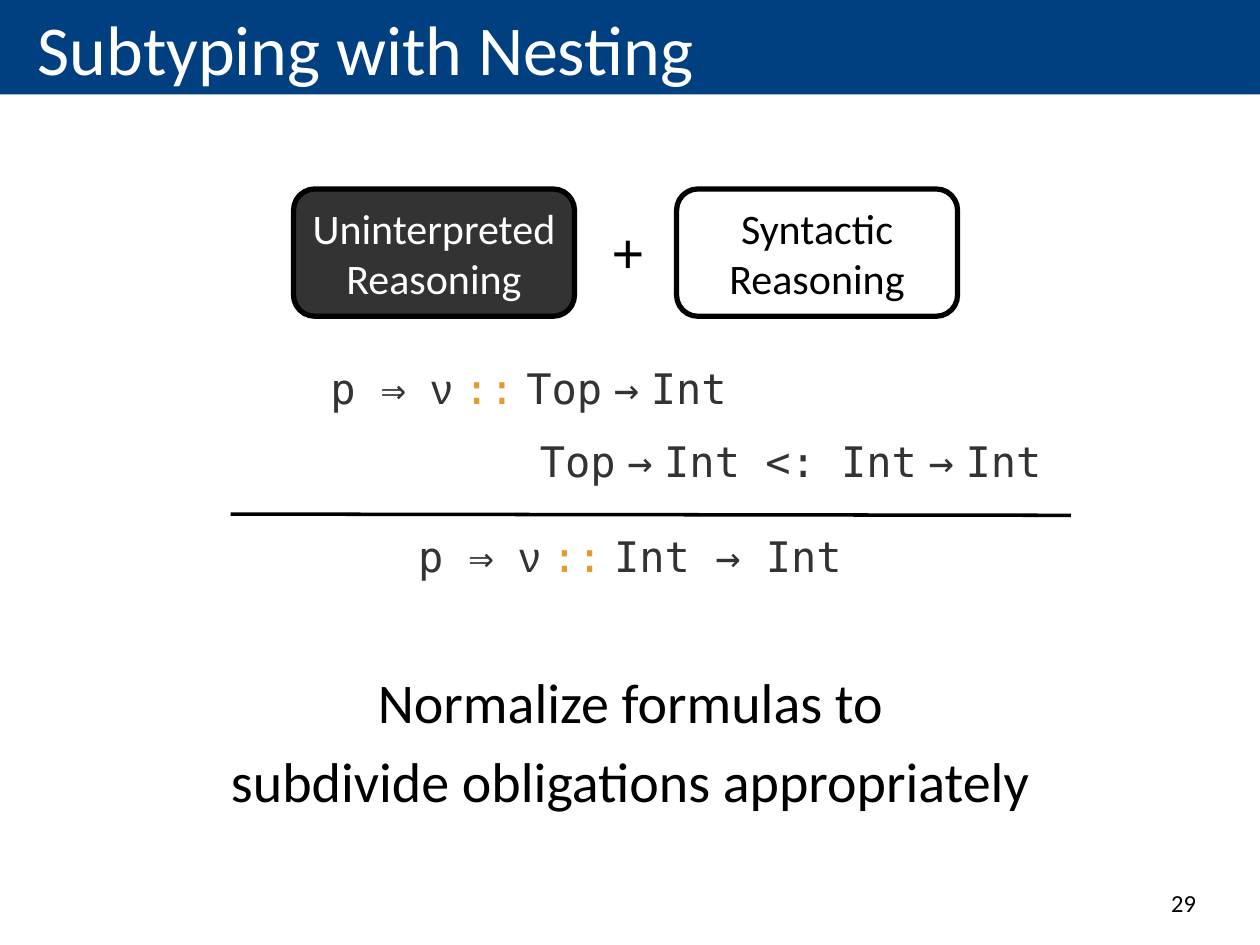
"""Builds the slide "Subtyping with Nesting"."""
import pptx
import pptx.dml.color
import pptx.enum.shapes
import pptx.enum.text
import pptx.oxml
import pptx.util

Inches = pptx.util.Inches
Pt = pptx.util.Pt
ALIGN = pptx.enum.text.PP_ALIGN
ANCHOR = pptx.enum.text.MSO_ANCHOR
SHAPES = pptx.enum.shapes.MSO_SHAPE

COLORS = {"band": "004080", "dark": "333333", "accent": "E39B30",
          "white": "FFFFFF", "black": "000000"}
MONO = "DejaVu Sans Mono"
NARROW_SPACE = (" ", "Arial", "dark")
ARROW = [NARROW_SPACE, ("→", MONO, "dark"), NARROW_SPACE]
TOP_TO_INT = [("Top", MONO, "dark"), *ARROW, ("Int", MONO, "dark")]
JUDGEMENT = [("p ⇒ ", MONO, "dark"), ("ν ", "Arial", "dark"),
             ("::", MONO, "accent"), NARROW_SPACE]


def rgb(name):
    return pptx.dml.color.RGBColor.from_string(COLORS[name])


def set_values(target, values):
    for name, value in values.items():
        setattr(target, name, value)


def add_runs(paragraph, runs, size):
    for text, font, color in runs:
        for index, line in enumerate(text.split("\n")):
            if index:
                paragraph.add_line_break()
            run = paragraph.add_run()
            run.text = line
            set_values(run.font, {"name": font, "size": Pt(size)})
            run.font.color.rgb = rgb(color)


def write(shape, paragraphs, size, align=ALIGN.CENTER, space=0, **frame_values):
    frame = shape.text_frame
    set_values(frame, {"word_wrap": True, "vertical_anchor": ANCHOR.MIDDLE, **frame_values})
    for index, runs in enumerate(paragraphs):
        paragraph = frame.add_paragraph() if index else frame.paragraphs[0]
        set_values(paragraph, {"alignment": align, "space_before": Pt(space)})
        add_runs(paragraph, runs, size)


def add_text(slide, box, paragraphs, size, **values):
    shape = slide.shapes.add_textbox(*map(Inches, box))
    write(shape, paragraphs, size, **values)


def add_box(slide, kind, box, fill=None):
    shape = slide.shapes.add_shape(kind, *map(Inches, box))
    shape.shadow.inherit = False
    shape.line.fill.background()
    if fill:
        shape.fill.solid()
        shape.fill.fore_color.rgb = rgb(fill)
    else:
        shape.fill.background()
    return shape


def add_title(slide, text):
    shape = add_box(slide, SHAPES.RECTANGLE, (0, 0, 10, 0.75), "band")
    write(shape, [[(text, "Calibri", "white")]], 40, ALIGN.LEFT, margin_left=Inches(0.3))


def add_formula(slide, box, runs, size=24):
    shape = add_box(slide, SHAPES.ROUNDED_RECTANGLE, box)
    shape.adjustments[0] = 0
    write(shape, [runs], size)


def add_reasoning(slide, left, text, fill, color):
    shape = add_box(slide, SHAPES.ROUNDED_RECTANGLE, (left, 1.5, 2.23, 1.01), fill)
    shape.line.color.rgb = rgb("black")
    shape.line.width = Pt(3)
    write(shape, [[(text, "Calibri", color)]], 24, word_wrap=False)


def add_rule(slide, start, end):
    connector = slide.shapes.add_connector(
        pptx.enum.shapes.MSO_CONNECTOR.STRAIGHT, *map(Inches, start + end))
    connector.line.color.rgb = rgb("black")
    connector.line.width = Pt(2)
    properties = connector.element.spPr
    properties.append(properties.makeelement(pptx.oxml.ns.qn("a:effectLst"), {}))


def main():
    presentation = pptx.Presentation()
    set_values(presentation, {"slide_width": Inches(10), "slide_height": Inches(7.5)})
    slide = presentation.slides.add_slide(presentation.slide_layouts[6])

    add_formula(slide, (1.03, 2.83, 6.33, 0.5), JUDGEMENT + TOP_TO_INT)
    add_reasoning(slide, 2.33, "Uninterpreted\nReasoning", "dark", "white")
    add_title(slide, "Subtyping with Nesting")
    add_text(slide, (7.17, 6.83, 2.42, 0.5), [[("29", "Calibri", "black")]], 14,
             align=ALIGN.RIGHT, vertical_anchor=ANCHOR.BOTTOM)

    add_formula(slide, (0, 4.16, 10, 0.5), JUDGEMENT + [("Int → Int", MONO, "dark")])
    add_rule(slide, (8.5, 4.09), (1.83, 4.08))

    lines = ["Normalize formulas to", "subdivide obligations appropriately"]
    add_text(slide, (0.42, 5.25, 9.17, 2.25), [[(line, "Calibri", "black")] for line in lines],
             32, space=6.4, vertical_anchor=ANCHOR.TOP)

    subtype = [*TOP_TO_INT, (" <: Int", MONO, "dark"), *ARROW, ("Int", MONO, "dark")]
    add_formula(slide, (3.19, 3.41, 6.17, 0.5), subtype)
    add_formula(slide, (4.61, 1.67, 0.75, 0.64), [("+", "Arial", "black")], 32)
    add_reasoning(slide, 5.37, "Syntactic\nReasoning", "white", "black")
    presentation.save("out.pptx")


if __name__ == "__main__":
    main()
